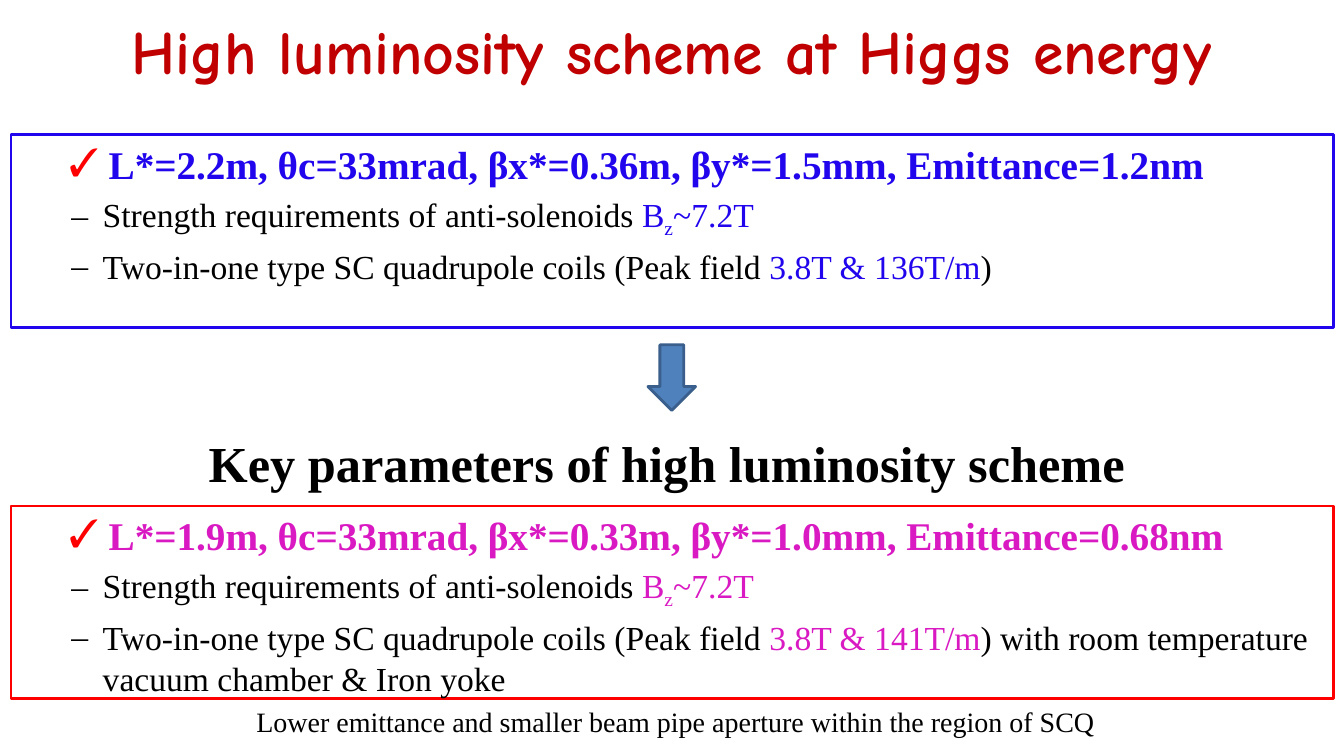
from lxml import etree
from pptx import Presentation
from pptx import util as u
from pptx.dml.color import RGBColor
from pptx.enum import shapes, text
from pptx.oxml import ns

BLACK = RGBColor(0x00, 0x00, 0x00)
RED = RGBColor(0xFF, 0x00, 0x00)
DARK_RED = RGBColor(0xC0, 0x00, 0x00)
BLUE = RGBColor(0x21, 0x05, 0xED)
MAGENTA = RGBColor(0xD9, 0x19, 0xC2)
ARROW_FILL = RGBColor(0x4F, 0x81, 0xBD)
ARROW_LINE = RGBColor(0x3A, 0x5F, 0x8C)
SERIF = "Times New Roman"


def add_run(paragraph, words, size=24, color=BLACK, bold=False, font=SERIF, baseline=0):
    """Append formatted words to a paragraph."""
    run = paragraph.add_run()
    run.text = words
    run.font.size = u.Pt(size)
    run.font.name = font
    run.font.bold = bold
    run.font.color.rgb = color
    if baseline:
        run._r.get_or_add_rPr().set("baseline", str(baseline * 1000))


def set_bullet(paragraph, mark, color, margin, hang, space):
    """Give a left-aligned paragraph a hanging bullet and space before it."""
    paragraph.alignment = text.PP_ALIGN.LEFT
    paragraph.space_before = u.Pt(space)
    properties = paragraph._p.get_or_add_pPr()
    properties.set("marL", str(u.Cm(margin)))
    properties.set("indent", str(-u.Cm(hang)))
    bullet_color = etree.SubElement(properties, ns.qn("a:buClr"))
    etree.SubElement(bullet_color, ns.qn("a:srgbClr"), val=str(color))
    etree.SubElement(properties, ns.qn("a:buFont"), typeface=SERIF)
    etree.SubElement(properties, ns.qn("a:buChar"), char=mark)


presentation = Presentation()
presentation.slide_width = u.Cm(33.87)
presentation.slide_height = u.Cm(19.05)
slide = presentation.slides.add_slide(presentation.slide_layouts[5])

# Title
title = slide.shapes.title
title.left, title.top, title.width, title.height = u.Cm(0.56), u.Cm(0.18), u.Cm(32.77), u.Cm(2.13)
title.text_frame.auto_size = text.MSO_AUTO_SIZE.NONE
title.text_frame.vertical_anchor = text.MSO_ANCHOR.MIDDLE
paragraph = title.text_frame.paragraphs[0]
paragraph.alignment = text.PP_ALIGN.CENTER
paragraph.space_before, paragraph.space_after = u.Pt(12), u.Pt(6)
add_run(paragraph, "High luminosity scheme at Higgs energy", size=44, color=DARK_RED, bold=True,
        font="Comic Neue")

# Parameter boxes: top, outline, accent, parameters, peak field, ending
schemes = [
    (3.4, BLUE, BLUE, "L*=2.2m, θc=33mrad, βx*=0.36m, βy*=1.5mm, Emittance=1.2nm",
     "3.8T & 136T/m", ")"),
    (12.75, RED, MAGENTA, "L*=1.9m, θc=33mrad, βx*=0.33m, βy*=1.0mm, Emittance=0.68nm",
     "3.8T & 141T/m", ") with room temperature vacuum chamber & Iron yoke"),
]
for top, outline, accent, parameters, peak_field, ending in schemes:
    box = slide.shapes.add_shape(shapes.MSO_SHAPE.RECTANGLE, u.Cm(0.28), u.Cm(top),
                                 u.Cm(33.32), u.Cm(4.85))
    box.shadow.inherit = False
    box.fill.background()
    box.line.color.rgb = outline
    box.line.width = u.Pt(2)
    frame = box.text_frame
    frame.word_wrap = True
    frame.vertical_anchor = text.MSO_ANCHOR.TOP

    heading = frame.paragraphs[0]
    set_bullet(heading, "✓", RED, margin=2.21, hang=1.0, space=5.6)
    add_run(heading, parameters, size=28, color=accent, bold=True)

    solenoids = frame.add_paragraph()
    coils = frame.add_paragraph()
    for paragraph in (solenoids, coils):
        paragraph.level = 1
        set_bullet(paragraph, "–", BLACK, margin=2.06, hang=0.79, space=4.8)
    add_run(solenoids, "Strength requirements of anti-solenoids ")
    add_run(solenoids, "B", color=accent)
    add_run(solenoids, "z", color=accent, baseline=-25)
    add_run(solenoids, "~7.2T", color=accent)
    add_run(coils, "Two-in-one type SC quadrupole coils (Peak field ")
    add_run(coils, peak_field, color=accent)
    add_run(coils, ending)

# Arrow between the schemes
arrow = slide.shapes.add_shape(shapes.MSO_SHAPE.DOWN_ARROW, u.Cm(16.33), u.Cm(8.69),
                               u.Cm(1.2), u.Cm(1.65))
arrow.shadow.inherit = False
arrow.fill.solid()
arrow.fill.fore_color.rgb = ARROW_FILL
arrow.line.color.rgb = ARROW_LINE
arrow.line.width = u.Pt(2)

# Centred captions: left, top, width, height, words, size, bold
captions = [
    (0.3, 10.77, 33.02, 1.8, "Key parameters of high luminosity scheme", 36, True),
    (3.73, 17.63, 26.6, 1.11,
     "Lower emittance and smaller beam pipe aperture within the region of SCQ", 20, False),
]
for left, top, width, height, words, size, bold in captions:
    caption = slide.shapes.add_textbox(u.Cm(left), u.Cm(top), u.Cm(width), u.Cm(height))
    caption.text_frame.word_wrap = True
    paragraph = caption.text_frame.paragraphs[0]
    paragraph.alignment = text.PP_ALIGN.CENTER
    add_run(paragraph, words, size=size, bold=bold)

presentation.save("out.pptx")
